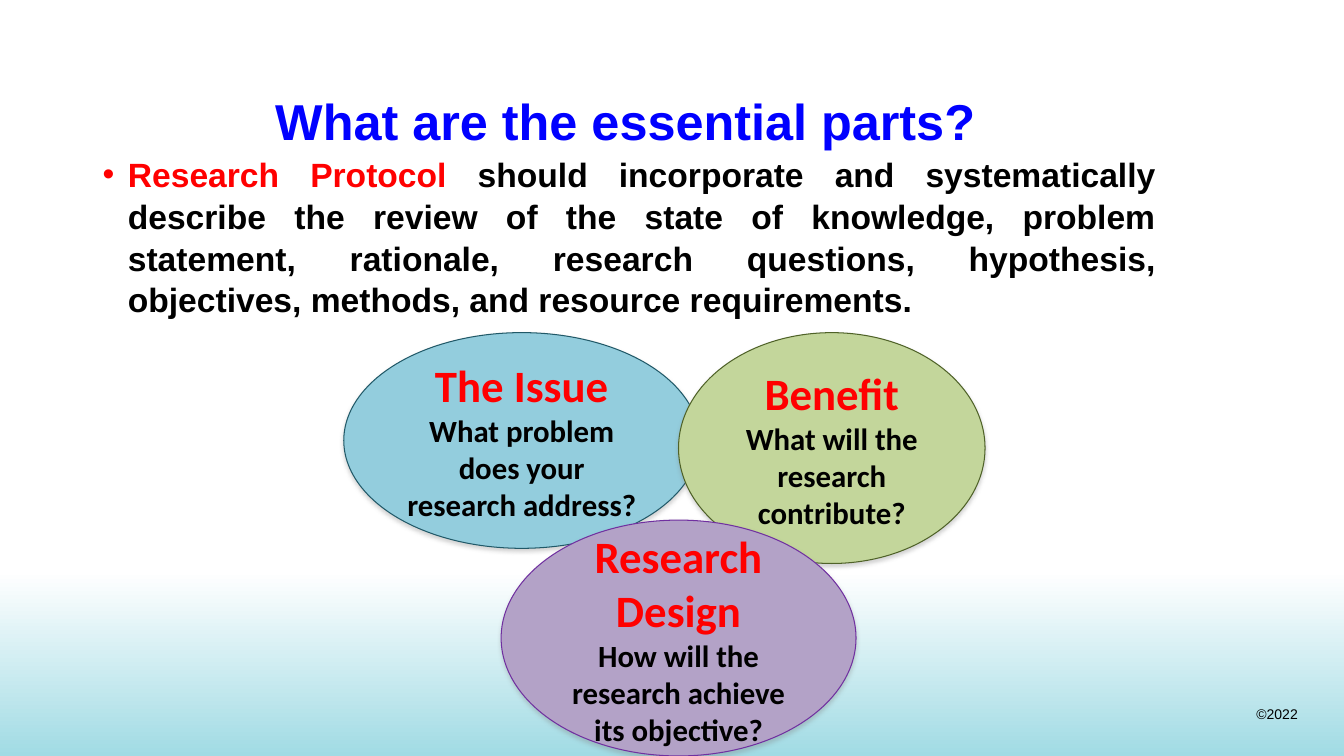
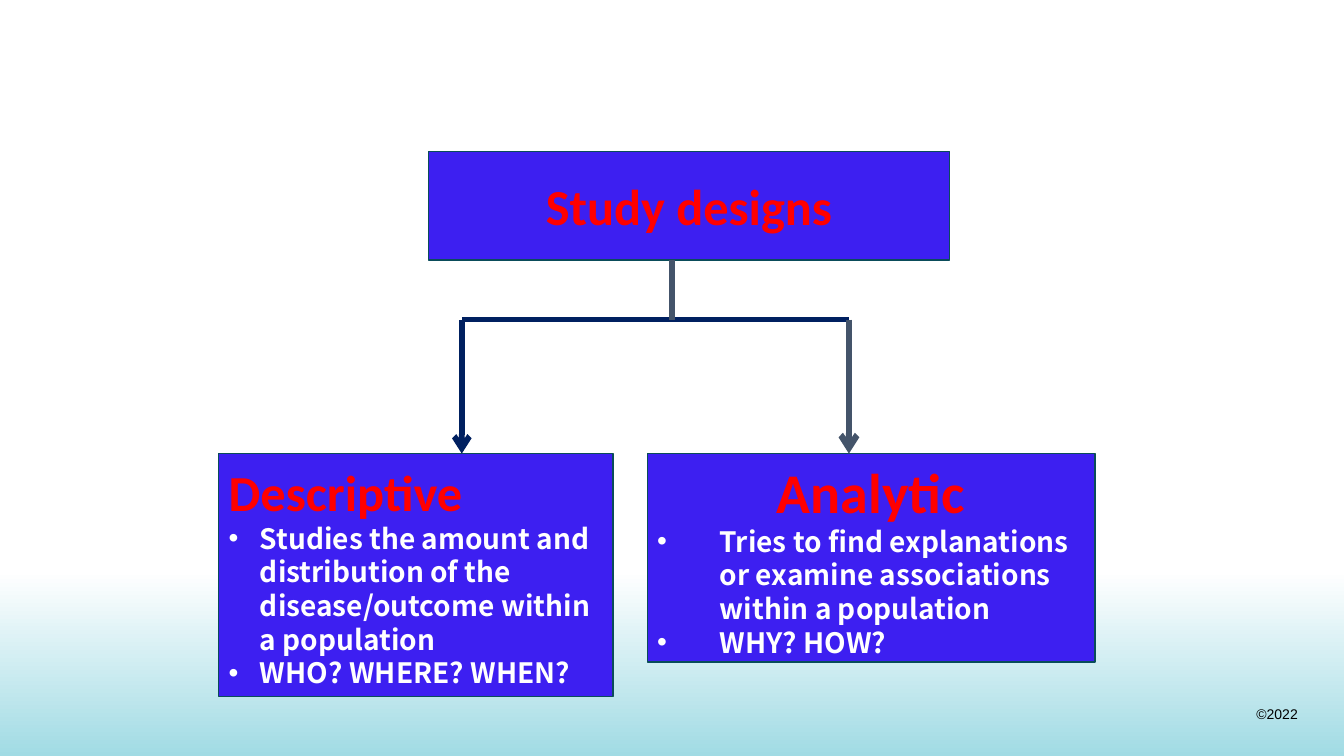
import lxml.etree
import pptx
import pptx.dml.color
import pptx.enum.shapes
import pptx.enum.text
import pptx.oxml.ns
import pptx.util

Inches = pptx.util.Inches
Pt = pptx.util.Pt
RGBColor = pptx.dml.color.RGBColor
Align = pptx.enum.text.PP_ALIGN
Anchor = pptx.enum.text.MSO_ANCHOR
Shape = pptx.enum.shapes.MSO_SHAPE
qn = pptx.oxml.ns.qn

WHITE = RGBColor(0xFF, 0xFF, 0xFF)
BLACK = RGBColor(0, 0, 0)
RED = RGBColor(0xFF, 0, 0)
BLUE = RGBColor(0, 0, 0xFF)
AQUA = RGBColor(0xA1, 0xDB, 0xE4)
GRAY = RGBColor(0x80, 0x80, 0x80)
SKY = RGBColor(0x93, 0xCD, 0xDD)
TEAL = RGBColor(0x21, 0x59, 0x68)
LIME = RGBColor(0xC3, 0xD6, 0x9B)
OLIVE = RGBColor(0x4F, 0x62, 0x28)
LILAC = RGBColor(0xB3, 0xA2, 0xC7)
PURPLE = RGBColor(0x70, 0x30, 0xA0)
INDIGO = RGBColor(0x3D, 0x1F, 0xF1)
PINE = RGBColor(0x0A, 0x4C, 0x5A)
NAVY = RGBColor(0, 0x20, 0x60)
SLATE = RGBColor(0x44, 0x54, 0x6A)

WIDTH, HEIGHT = 13.33, 7.5
SANS, HEAD, NOTO = "Arial", "Calibri", "Noto Sans CJK JP"


def node(parent, tag, **attrs):
    return lxml.etree.SubElement(parent, qn(tag), attrs)


class Deck:
    """Holds the shared style and the slide being drawn."""

    def __init__(self):
        self.prs = pptx.Presentation()
        self.prs.slide_width = Inches(WIDTH)
        self.prs.slide_height = Inches(HEIGHT)
        self.slide = None

    def start(self, title=None):
        """Add a slide with the band, the footer and, if given, a title."""
        layout = self.prs.slide_layouts[5 if title else 6]
        self.slide = self.prs.slides.add_slide(layout)
        self.band()
        foot = self.box(12.36, 6.95, 0.61, 0.27)
        foot.word_wrap = False
        self.label(foot.paragraphs[0], "©2022", 10, SANS, BLACK, Align.RIGHT, False)
        if title:
            self.title(title)

    def title(self, text):
        head = self.slide.shapes.title
        self.place(head, 2.63, 0.82, 7.8, 0.75)
        head.text_frame.vertical_anchor = Anchor.MIDDLE
        self.label(head.text_frame.paragraphs[0], text, 36, SANS, BLUE)

    def place(self, shape, left, top, width, height):
        shape.left, shape.top = Inches(left), Inches(top)
        shape.width, shape.height = Inches(width), Inches(height)

    def band(self):
        band = self.slide.shapes.add_shape(
            Shape.RECTANGLE, 0, Inches(5.67), Inches(WIDTH), Inches(1.83))
        band.shadow.inherit = False
        band.line.fill.background()
        band.fill.gradient()
        band.fill.gradient_angle = 270
        for stop, spot, color in zip(band.fill.gradient_stops, (0, 1), (WHITE, AQUA)):
            stop.position = spot
            stop.color.rgb = color

    def box(self, left, top, width, height):
        """Add a wrapping text box and return its text frame."""
        box = self.slide.shapes.add_textbox(
            Inches(left), Inches(top), Inches(width), Inches(height))
        box.text_frame.word_wrap = True
        return box.text_frame

    def shape(self, kind, at, fill, edge, width):
        shape = self.slide.shapes.add_shape(kind, *map(Inches, at))
        shape.shadow.inherit = False
        shape.fill.solid()
        shape.fill.fore_color.rgb = fill
        shape.line.color.rgb = edge
        shape.line.width = Pt(width)
        shape.text_frame.vertical_anchor = Anchor.MIDDLE
        return shape

    def label(self, para, text, size, font, color, align=Align.LEFT, bold=True):
        para.text = text
        para.alignment = align
        self.style(para.runs[0], size, font, color, bold)

    def style(self, run, size, font, color, bold=True):
        run.font.size = Pt(size)
        run.font.name = font
        run.font.bold = bold
        run.font.color.rgb = color

    def bullet(self, para, indent):
        """Give the paragraph a hanging bullet."""
        props = para._p.get_or_add_pPr()
        props.set("marL", str(Inches(indent)))
        props.set("indent", str(-Inches(indent)))
        node(props, "a:buFont", typeface=SANS)
        node(props, "a:buChar", char="•")

    def oval(self, at, fill, edge, head, text):
        oval = self.shape(Shape.OVAL, at, fill, edge, 0.75)
        effects = oval.element.spPr.find(qn("a:effectLst"))
        shade = node(effects, "a:outerShdw", blurRad=str(Pt(3.1)), dist=str(Pt(1.8)),
                     dir="5400000", rotWithShape="0")
        color = node(shade, "a:srgbClr", val=str(GRAY))
        node(color, "a:alpha", val="35000")
        frame = oval.text_frame
        self.label(frame.paragraphs[0], head, 32, HEAD, RED, Align.CENTER)
        self.label(frame.add_paragraph(), text, 22, HEAD, BLACK, Align.CENTER)

    def card(self, at, head, size=36, align=Align.CENTER, points=(), indent=0):
        frame = self.shape(Shape.RECTANGLE, at, INDIGO, PINE, 1).text_frame
        self.label(frame.paragraphs[0], head, size, HEAD, RED, align)
        for point in points:
            para = frame.add_paragraph()
            self.label(para, point, 20, NOTO, WHITE)
            para.line_spacing = Pt(24)
            self.bullet(para, indent)

    def line(self, start, end, color, width, arrow=False):
        line = self.slide.shapes.add_connector(
            pptx.enum.shapes.MSO_CONNECTOR.STRAIGHT, *map(Inches, start + end))
        line.line.color.rgb = color
        line.line.width = Pt(width)
        if arrow:
            node(line.element.spPr.find(qn("a:ln")), "a:tailEnd", type="arrow")
        node(line.element.spPr, "a:effectLst")


def parts(deck):
    deck.start("What are the essential parts?")
    para = deck.box(0.92, 1.46, 10.64, 6.04).paragraphs[0]
    deck.label(para, "Research Protocol", 24, SANS, RED, Align.JUSTIFY)
    rest = para.add_run()
    rest.text = (" should incorporate and systematically describe the review of the "
                 "state of knowledge, problem statement, rationale, research questions, "
                 "hypothesis, objectives, methods, and resource requirements.")
    deck.style(rest, 24, SANS, BLACK)
    para.line_spacing = 1.04
    deck.bullet(para, 0.25)
    deck.oval((3.41, 3.3, 3.53, 2.14), SKY, TEAL,
              "The Issue", "What problem does your research address?")
    deck.oval((6.73, 3.3, 3.04, 2.29), LIME, OLIVE,
              "Benefit", "What will the research contribute?")
    deck.oval((4.97, 5.16, 3.52, 2.34), LILAC, PURPLE,
              "Research Design", "How will the research achieve its objective?")


def designs(deck):
    deck.start()
    deck.card((4.25, 1.5, 5.17, 1.08), "Study designs")
    deck.card((2.17, 4.5, 3.91, 2.41), "Descriptive", align=Align.LEFT, indent=0.31, points=(
        "Studies the amount and distribution of the disease/outcome within a population",
        "WHO? WHERE? WHEN?"))
    deck.card((6.42, 4.5, 4.44, 2.07), "Analytic", size=40, indent=0.62, points=(
        "Tries to find explanations or examine associations within a population",
        "WHY? HOW?"))
    left, mid, right = 4.58, 6.67, 8.42
    fork, foot = 3.17, 4.5
    deck.line((left, fork), (right, fork), NAVY, 3.25)
    deck.line((left, fork), (left, foot), NAVY, 4, arrow=True)
    deck.line((right, fork), (right, foot), SLATE, 4.25, arrow=True)
    deck.line((mid, 2.58), (mid, fork), SLATE, 4.25)


def main():
    deck = Deck()
    parts(deck)
    designs(deck)
    deck.prs.save("out.pptx")


if __name__ == "__main__":
    main()
